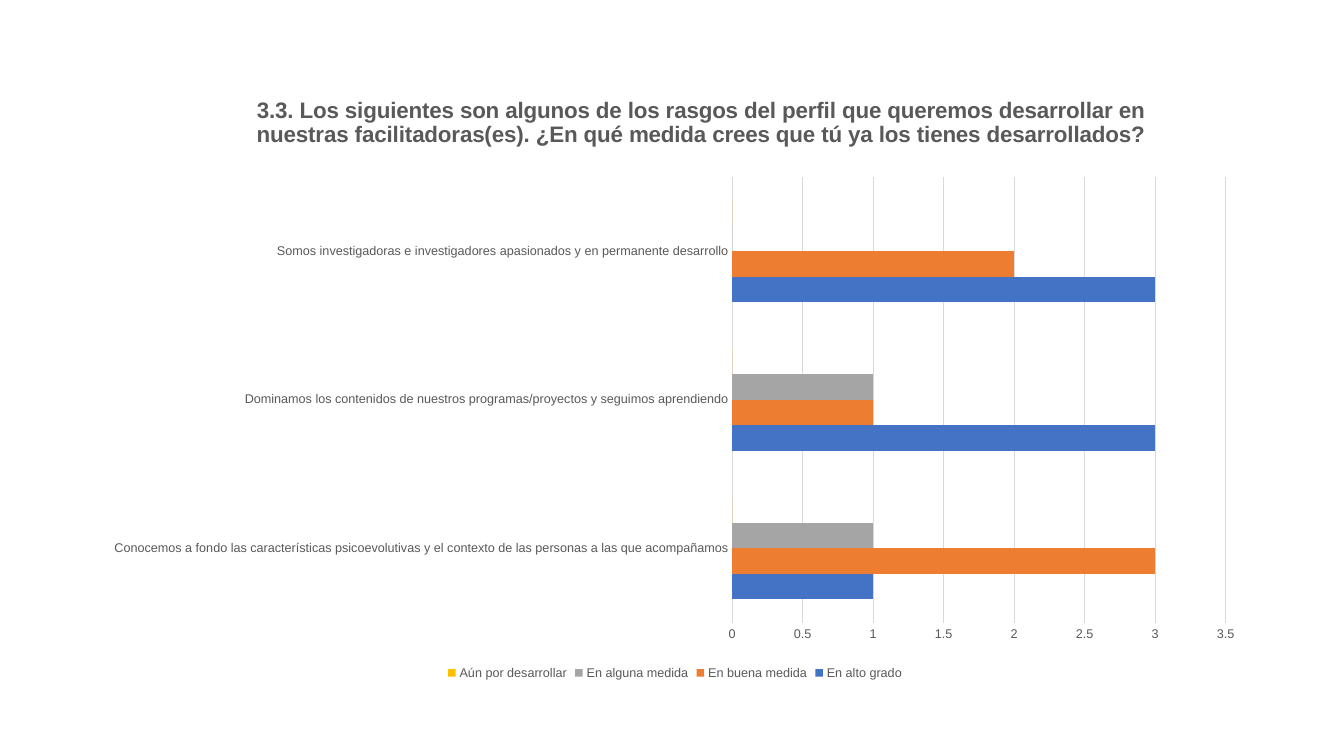
import pptx
import pptx.chart.data
import pptx.dml.color
import pptx.enum.chart
import pptx.oxml
import pptx.oxml.ns
import pptx.util
from pptx.util import Inches

FONT = "Arial"
TEXT_GREY = "595959"
LINE_GREY = "D9D9D9"
QUESTION = (
    "3.3. Los siguientes son algunos de los rasgos del perfil que queremos desarrollar en "
    "nuestras facilitadoras(es). ¿En qué medida crees que tú ya los tienes desarrollados?"
)
TRAITS = [
    "Conocemos a fondo las características psicoevolutivas y el contexto de las personas a las que acompañamos",
    "Dominamos los contenidos de nuestros programas/proyectos y seguimos aprendiendo",
    "Somos investigadoras e investigadores apasionados y en permanente desarrollo",
]
ANSWERS = [
    ("En alto grado", (1, 3, 3), "4472C4"),
    ("En buena medida", (3, 1, 2), "ED7D31"),
    ("En alguna medida", (1, 1, 0), "A5A5A5"),
    ("Aún por desarrollar", (0, 0, 0), "FFC000"),
]


def rgb(code):
    """Return the colour for a hex string."""
    return pptx.dml.color.RGBColor.from_string(code)


def style_font(font, size, bold=False):
    """Apply the chart typeface in grey at the given size."""
    font.name = FONT
    font.size = pptx.util.Pt(size)
    font.bold = bold
    font.color.rgb = rgb(TEXT_GREY)


def style_line(line):
    """Make a line thin and light grey."""
    line.color.rgb = rgb(LINE_GREY)
    line.width = pptx.util.Pt(0.75)


def set_layout(parent, index, **fractions):
    """Place a chart part at fractions of the chart area."""
    for old in parent.findall(pptx.oxml.ns.qn("c:layout")):
        parent.remove(old)
    target = '<c:layoutTarget val="inner"/>' if "w" in fractions else ""
    modes = '<c:xMode val="edge"/><c:yMode val="edge"/>'
    values = "".join(f'<c:{key} val="{value}"/>' for key, value in fractions.items())
    parent.insert(index, pptx.oxml.parse_xml(
        f'<c:layout {pptx.oxml.ns.nsdecls("c")}><c:manualLayout>'
        f"{target}{modes}{values}</c:manualLayout></c:layout>"
    ))


def add_answers_chart(slide, left, top, width, height):
    """Add the clustered bars of answers per trait in the given box."""
    answers = pptx.chart.data.CategoryChartData()
    answers.categories = TRAITS
    for name, counts, _ in ANSWERS:
        answers.add_series(name, counts)
    chart = slide.shapes.add_chart(
        pptx.enum.chart.XL_CHART_TYPE.BAR_CLUSTERED, left, top, width, height, answers
    ).chart
    style_font(chart.font, 9)

    chart.has_title = True
    heading = chart.chart_title.text_frame.paragraphs[0].add_run()
    heading.text = QUESTION
    style_font(heading.font, 16, bold=True)
    set_layout(chart.chart_title._element, 1, x=0.138, y=0.008)
    plot_area = chart._chartSpace.chart.plotArea
    set_layout(plot_area, 0, x=0.549, y=0.151, w=0.423, h=0.746)

    bars = chart.plots[0]
    bars.gap_width = 182
    bars.overlap = 0
    bars.vary_by_categories = False
    for series, (_, _, color) in zip(bars.series, ANSWERS):
        series.format.fill.solid()
        series.format.fill.fore_color.rgb = rgb(color)

    for axis in (chart.category_axis, chart.value_axis):
        axis.major_tick_mark = pptx.enum.chart.XL_TICK_MARK.NONE
        axis.minor_tick_mark = pptx.enum.chart.XL_TICK_MARK.NONE
        style_font(axis.tick_labels.font, 9)
    style_line(chart.category_axis.format.line)
    counts_axis = chart.value_axis
    counts_axis.format.line.fill.background()
    counts_axis.minimum_scale = 0
    counts_axis.maximum_scale = 3.5
    counts_axis.major_unit = 0.5
    counts_axis.has_major_gridlines = True
    style_line(counts_axis.major_gridlines.format.line)

    chart.has_legend = True
    chart.legend.position = pptx.enum.chart.XL_LEGEND_POSITION.BOTTOM
    chart.legend.include_in_layout = False
    style_font(chart.legend.font, 9)


def main():
    """Build and save the presentation."""
    deck = pptx.Presentation()
    deck.slide_width = Inches(13.33)
    deck.slide_height = Inches(7.5)
    slide = deck.slides.add_slide(deck.slide_layouts[6])
    add_answers_chart(slide, Inches(0.91), Inches(0.86), Inches(11.57), Inches(5.93))
    deck.save("out.pptx")


if __name__ == "__main__":
    main()
